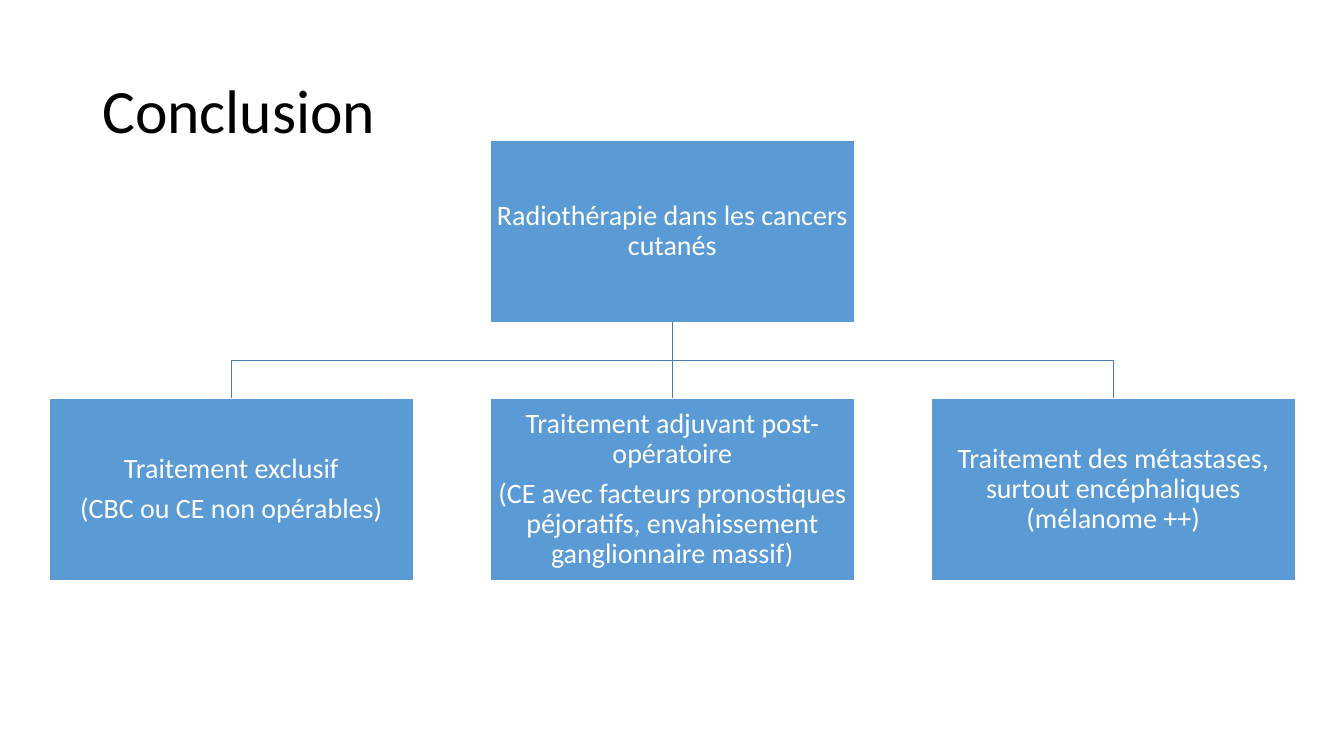
import pptx
import pptx.util
import pptx.dml.color
import pptx.enum.shapes
import pptx.enum.text
import lxml.etree
import pptx.oxml.ns

Pt = pptx.util.Pt
BLACK = pptx.dml.color.RGBColor(0x00, 0x00, 0x00)
WHITE = pptx.dml.color.RGBColor(0xFF, 0xFF, 0xFF)
BOX_BLUE = pptx.dml.color.RGBColor(0x5B, 0x9B, 0xD5)
LINE_BLUE = pptx.dml.color.RGBColor(0x49, 0x7C, 0xAB)

BOX_WIDTH, BOX_HEIGHT = 260.5, 130.25
ROOT_LEFT, ROOT_TOP = 350, 100
TREATMENT_TOP = 284.5
COLUMN_STEP = 315

presentation = pptx.Presentation()
presentation.slide_width = Pt(960)
presentation.slide_height = Pt(540)
slide = presentation.slides.add_slide(presentation.slide_layouts[6])


def add_run(paragraph, text, size, color):
    paragraph.line_spacing = 0.9
    run = paragraph.add_run()
    run.text = text
    run.font.name = "Calibri"
    run.font.size = Pt(size)
    run.font.color.rgb = color


def add_box(left, top, lines):
    box = slide.shapes.add_shape(
        pptx.enum.shapes.MSO_SHAPE.RECTANGLE,
        Pt(left), Pt(top), Pt(BOX_WIDTH), Pt(BOX_HEIGHT))
    box.shadow.inherit = False
    box.fill.solid()
    box.fill.fore_color.rgb = BOX_BLUE
    box.line.color.rgb = WHITE
    box.line.width = Pt(1)
    frame = box.text_frame
    frame.word_wrap = True
    frame.vertical_anchor = pptx.enum.text.MSO_ANCHOR.MIDDLE
    frame.margin_left = frame.margin_right = Pt(1)
    frame.margin_top = frame.margin_bottom = Pt(1)
    for index, line in enumerate(lines):
        paragraph = frame.add_paragraph() if index else frame.paragraphs[0]
        paragraph.alignment = pptx.enum.text.PP_ALIGN.CENTER
        paragraph.space_after = Pt(7)
        add_run(paragraph, line, 20, WHITE)
    return box


# Title
title = slide.shapes.add_textbox(Pt(66), Pt(28.75), Pt(828), Pt(104.5))
title.text_frame.word_wrap = True
title.text_frame.vertical_anchor = pptx.enum.text.MSO_ANCHOR.MIDDLE
add_run(title.text_frame.paragraphs[0], "Conclusion", 44, BLACK)

# Root and the three treatments
radiotherapy = add_box(ROOT_LEFT, ROOT_TOP, ["Radiothérapie dans les cancers cutanés"])
treatment_lines = [
    ["Traitement exclusif", "(CBC ou CE non opérables)"],
    ["Traitement adjuvant post-opératoire",
     "(CE avec facteurs pronostiques péjoratifs, envahissement ganglionnaire massif)"],
    ["Traitement des métastases, surtout encéphaliques (mélanome ++)"],
]
exclusive, adjuvant, metastases = [
    add_box(ROOT_LEFT + (column - 1) * COLUMN_STEP, TREATMENT_TOP, lines)
    for column, lines in enumerate(treatment_lines)]

# Straight branch to the middle treatment
stem = slide.shapes.add_connector(
    pptx.enum.shapes.MSO_CONNECTOR.STRAIGHT, 0, 0, 0, 0)
stem.begin_connect(radiotherapy, 2)
stem.end_connect(adjuvant, 0)
stem.line.color.rgb = LINE_BLUE
stem.line.width = Pt(1)
lxml.etree.SubElement(stem._element.spPr, pptx.oxml.ns.qn("a:effectLst"))

# Bent branches to the outer treatments
root_center = ROOT_LEFT + BOX_WIDTH / 2
root_bottom = ROOT_TOP + BOX_HEIGHT
bend = (root_bottom + TREATMENT_TOP) / 2
for side in (-1, 1):
    treatment_center = root_center + side * COLUMN_STEP
    path_builder = slide.shapes.build_freeform(Pt(root_center), Pt(root_bottom))
    path_builder.add_line_segments(
        [(Pt(root_center), Pt(bend)),
         (Pt(treatment_center), Pt(bend)),
         (Pt(treatment_center), Pt(TREATMENT_TOP))], close=False)
    branch = path_builder.convert_to_shape()
    branch.shadow.inherit = False
    branch.fill.background()
    branch.line.color.rgb = LINE_BLUE
    branch.line.width = Pt(1)

presentation.save("out.pptx")
